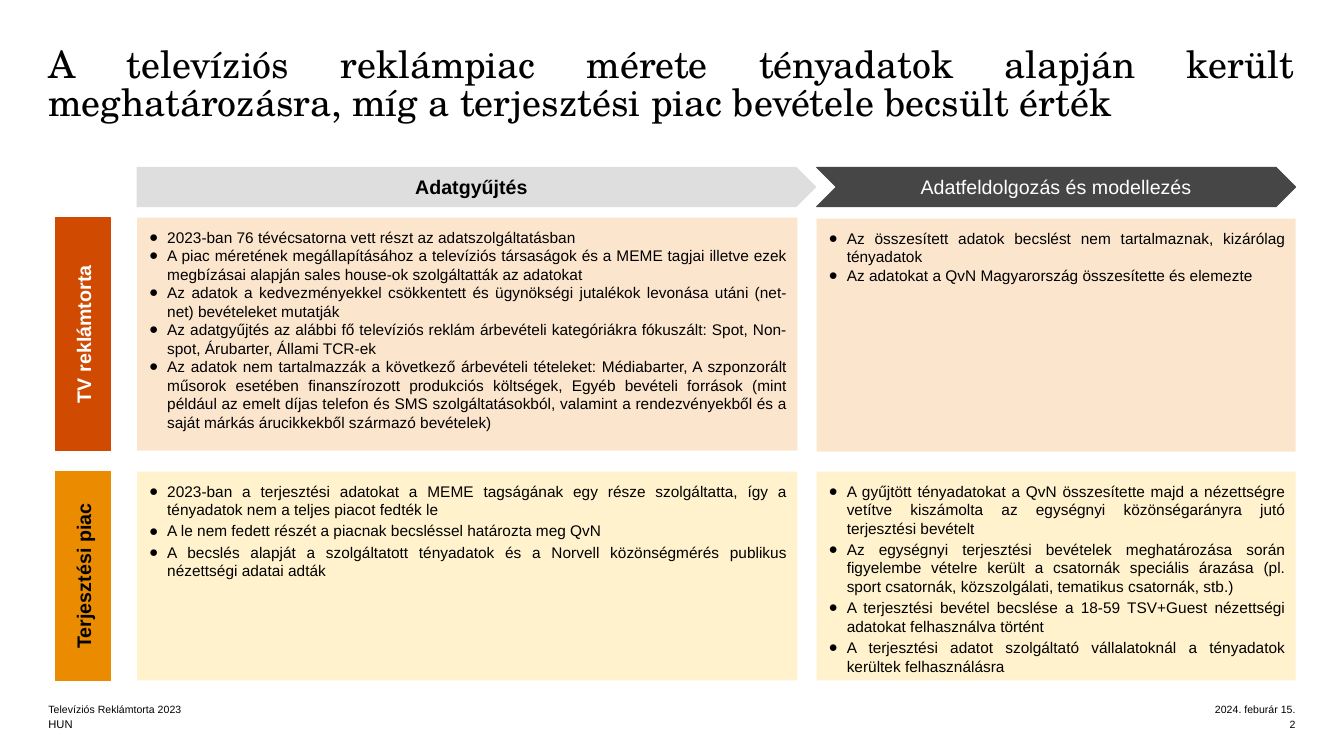
from dataclasses import dataclass

from lxml.etree import SubElement
from pptx import Presentation
from pptx.dml.color import RGBColor
from pptx.enum.shapes import MSO_SHAPE as Form
from pptx.enum.text import MSO_ANCHOR as Anchor, PP_ALIGN as Align
from pptx.oxml.ns import qn
from pptx.shapes.autoshape import Shape
from pptx.slide import Slide
from pptx.text.text import TextFrame
from pptx.util import Emu, Pt

PX = 9144
SANS = "Arial"
SERIF = "TeX Gyre Schola"
HUES = {
    "black": "000000", "white": "FFFFFF", "light": "DEDEDE", "dark": "464646",
    "red": "D04A02", "gold": "EB8C00", "peach": "FCE5CD", "cream": "FFF2CC",
}


@dataclass(frozen=True)
class Box:
    left: int
    top: int
    width: int
    height: int


@dataclass(frozen=True)
class Style:
    size: float
    hue: str = "black"
    bold: bool = False
    align: Align = Align.LEFT
    font: str = SANS
    lead: float = 1.0


@dataclass(frozen=True)
class Label:
    box: Box
    text: str
    style: Style
    anchor: Anchor = Anchor.BOTTOM


@dataclass(frozen=True)
class Head:
    box: Box
    form: Form
    fill: str
    text: str
    style: Style
    turn: int = 0


@dataclass(frozen=True)
class Panel:
    box: Box
    fill: str
    gap: int
    points: tuple[str, ...]
    tail: int = 0


def px(count: int) -> Emu:
    return Emu(count * PX)


def paint(name: str) -> RGBColor:
    return RGBColor.from_string(HUES[name])


def place(box: Box) -> list[Emu]:
    return [px(n) for n in (box.left, box.top, box.width, box.height)]


def frame(shape: Shape, inset: int, anchor: Anchor) -> TextFrame:
    text = shape.text_frame
    text.word_wrap = True
    text.vertical_anchor = anchor
    text.margin_left = text.margin_right = px(inset)
    text.margin_top = text.margin_bottom = px(inset)
    return text


def write(para, text: str, style: Style) -> None:
    para.alignment = style.align
    para.line_spacing = style.lead
    run = para.add_run()
    run.text = text
    run.font.name = style.font
    run.font.size = Pt(style.size)
    run.font.bold = style.bold
    run.font.color.rgb = paint(style.hue)


def mark(para) -> None:
    props = para._p.get_or_add_pPr()
    props.set("marL", str(px(20)))
    props.set("indent", str(px(-18)))
    tint = SubElement(props, qn("a:buClr"))
    SubElement(tint, qn("a:srgbClr"), val=HUES["black"])
    SubElement(props, qn("a:buFont"), typeface=SANS)
    SubElement(props, qn("a:buChar"), char="●")


def block(slide: Slide, form: Form, box: Box, fill: str) -> Shape:
    shape = slide.shapes.add_shape(form, *place(box))
    shape.shadow.inherit = False
    shape.fill.solid()
    shape.fill.fore_color.rgb = paint(fill)
    shape.line.fill.background()
    return shape


def add_label(slide: Slide, label: Label) -> None:
    shape = slide.shapes.add_textbox(*place(label.box))
    text = frame(shape, 0, label.anchor)
    write(text.paragraphs[0], label.text, label.style)


def add_head(slide: Slide, head: Head) -> None:
    shape = block(slide, head.form, head.box, head.fill)
    shape.line.color.rgb = paint(head.fill)
    shape.line.width = Pt(0.75)
    shape.rotation = head.turn
    write(frame(shape, 10, Anchor.MIDDLE).paragraphs[0], head.text, head.style)


def add_panel(slide: Slide, panel: Panel) -> None:
    shape = block(slide, Form.RECTANGLE, panel.box, panel.fill)
    text = frame(shape, 10, Anchor.TOP)
    for index, point in enumerate(panel.points):
        para = text.add_paragraph() if index else text.paragraphs[0]
        write(para, point, BODY)
        para.space_before = Pt(panel.gap if index else 0)
        para.space_after = Pt(0)
        mark(para)
    para.space_after = Pt(panel.tail)


BODY = Style(11, align=Align.JUSTIFY)
NOTE = Style(7.5)
DATE = Style(7.5, align=Align.RIGHT)
BOLD = Style(14, bold=True, align=Align.CENTER)
PALE = Style(14, "white", True, Align.CENTER)
PLAIN = Style(14, "white", align=Align.CENTER)
TITLE = Style(27, align=Align.JUSTIFY, font=SERIF, lead=0.85)

LABELS = (
    Label(Box(48, 47, 1236, 152), "A televíziós reklámpiac mérete tényadatok alapján került "
          "meghatározásra, míg a terjesztési piac bevétele becsült érték", TITLE, Anchor.TOP),
    Label(Box(48, 695, 599, 15), "Televíziós Reklámtorta 2023", NOTE),
    Label(Box(48, 710, 599, 15), "HUN", Style(8)),
    Label(Box(899, 695, 386, 15), "2024. feburár 15.", DATE),
    Label(Box(899, 710, 386, 15), "2", DATE),
)
HEADS = (
    Head(Box(136, 166, 673, 39), Form.PENTAGON, "light", "Adatgyűjtés", BOLD),
    Head(Box(810, 166, 475, 39), Form.CHEVRON, "dark", "Adatfeldolgozás és modellezés", PLAIN),
    Head(Box(-33, 304, 231, 55), Form.RECTANGLE, "red", "TV reklámtorta", PALE, 270),
    Head(Box(-21, 544, 207, 55), Form.RECTANGLE, "gold", "Terjesztési piac", BOLD, 270),
)
PANELS = (
    Panel(Box(136, 216, 655, 231), "peach", 0, (
        "2023-ban 76 tévécsatorna vett részt az adatszolgáltatásban",
        "A piac méretének megállapításához a televíziós társaságok és a MEME tagjai illetve "
        "ezek megbízásai alapján sales house-ok szolgáltatták az adatokat",
        "Az adatok a kedvezményekkel csökkentett és ügynökségi jutalékok levonása utáni "
        "(net-net) bevételeket mutatják",
        "Az adatgyűjtés az alábbi fő televíziós reklám árbevételi kategóriákra fókuszált: "
        "Spot, Non-spot, Árubarter, Állami TCR-ek",
        "Az adatok nem tartalmazzák a következő árbevételi tételeket: Médiabarter, A "
        "szponzorált műsorok esetében finanszírozott produkciós költségek, Egyéb bevételi "
        "források (mint például az emelt díjas telefon és SMS szolgáltatásokból, valamint a "
        "rendezvényekből és a saját márkás árucikkekből származó bevételek)",
    )),
    Panel(Box(810, 217, 475, 231), "peach", 0, (
        "Az összesített adatok becslést nem tartalmaznak, kizárólag tényadatok",
        "Az adatokat a QvN Magyarország összesítette és elemezte",
    )),
    Panel(Box(136, 468, 655, 207), "cream", 2, (
        "2023-ban a terjesztési adatokat a MEME tagságának egy része szolgáltatta, így a "
        "tényadatok nem a teljes piacot fedték le",
        "A le nem fedett részét a piacnak becsléssel határozta meg QvN",
        "A becslés alapját a szolgáltatott tényadatok és a Norvell közönségmérés publikus "
        "nézettségi adatai adták",
    )),
    Panel(Box(810, 468, 475, 207), "cream", 2, (
        "A gyűjtött tényadatokat a QvN összesítette majd a nézettségre vetítve kiszámolta az "
        "egységnyi közönségarányra jutó terjesztési bevételt",
        "Az egységnyi terjesztési bevételek meghatározása során figyelembe vételre került a "
        "csatornák speciális árazása (pl. sport csatornák, közszolgálati, tematikus "
        "csatornák, stb.)",
        "A terjesztési bevétel becslése a 18-59 TSV+Guest nézettségi adatokat felhasználva "
        "történt",
        "A terjesztési adatot szolgáltató vállalatoknál a tényadatok kerültek felhasználásra",
    ), 2),
)


def main() -> None:
    deck = Presentation()
    deck.slide_width, deck.slide_height = px(1333), px(750)
    slide = deck.slides.add_slide(deck.slide_layouts[6])
    for label in LABELS:
        add_label(slide, label)
    for head in HEADS:
        add_head(slide, head)
    for panel in PANELS:
        add_panel(slide, panel)
    deck.save("out.pptx")


if __name__ == "__main__":
    main()
